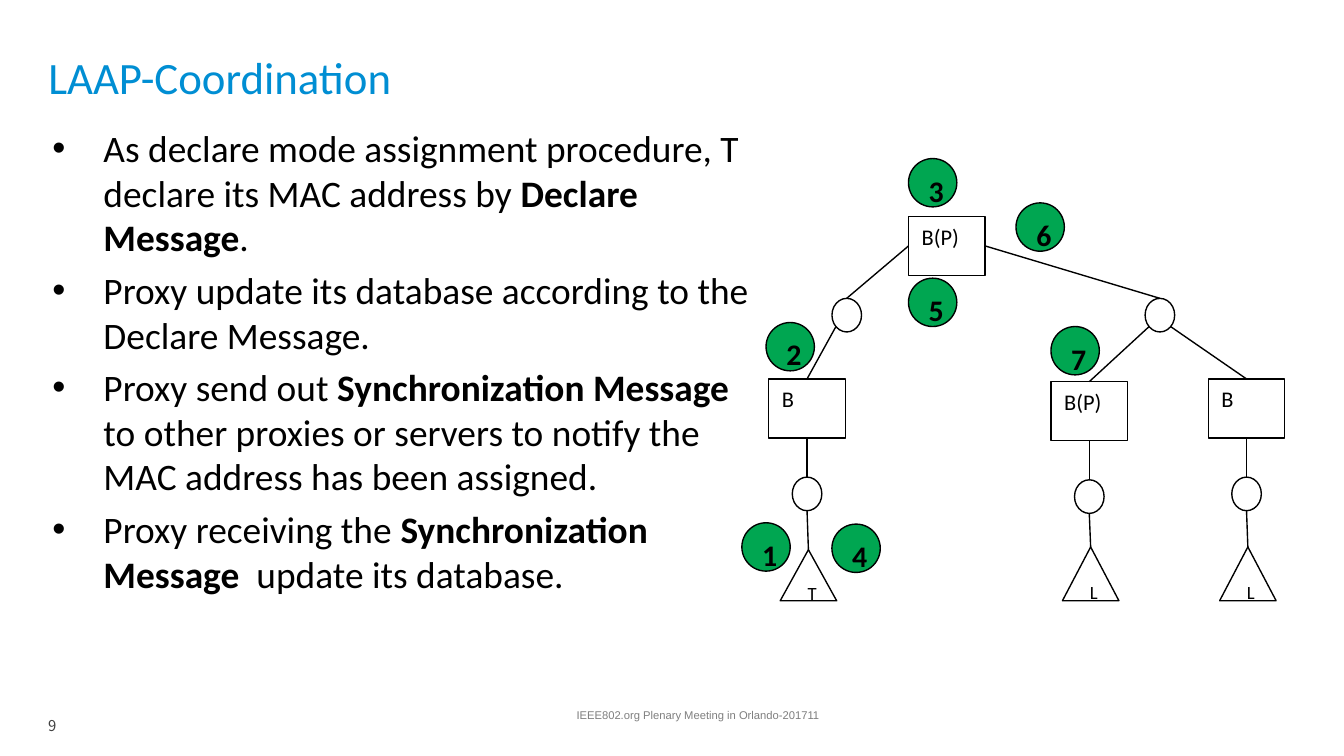
from lxml import etree
from pptx import Presentation
from pptx.dml.color import RGBColor
from pptx.enum.shapes import MSO_CONNECTOR, MSO_SHAPE as SHAPE
from pptx.enum.text import MSO_ANCHOR as ANCHOR, PP_ALIGN as ALIGN
from pptx.oxml.ns import qn
from pptx.util import Inches, Pt

COLORS = {
    "title": "008ED3", "text": "000000", "line": "000000", "step": "00A651",
    "number": "404040", "footer": "7F7F7F",
}
BOX_W, BOX_H = 0.57, 0.44
NODE_W, NODE_H = 0.22, 0.25
LEAF_W, LEAF_BOTTOM = 0.42, 4.47
STEP_D = 0.36
TOP, LEFT, BOTTOM, RIGHT = range(4)

# Each paragraph is a list of (text, bold) runs
BULLETS = [
    [("As declare mode assignment procedure, T declare its MAC address by ", False),
     ("Declare Message", True), (".", False)],
    [("Proxy update its database according to the Declare Message.", False)],
    [("Proxy send out ", False), ("Synchronization Message ", True),
     ("to other proxies or servers to notify the MAC address has been assigned.", False)],
    [("Proxy receiving the ", False), ("Synchronization Message  ", True),
     ("update its database.", False)],
]

# Left, top, box label, leaf label, leaf top
BRANCHES = [
    (5.72, 2.82, "B", "T", 4.09),
    (7.82, 2.84, "B(P)", "L", 4.07),
    (8.99, 2.82, "B", "L", 4.07),
]

# Left and top of the steps, numbered from 1
STEPS = [(5.52, 3.89), (5.7, 2.4), (6.76, 1.18), (6.19, 3.9),
         (6.76, 2.07), (7.56, 1.51), (7.82, 2.43)]


def rgb(name):
    return RGBColor.from_string(COLORS[name])


def add_run(p, text, size, color="text", font="Calibri", bold=False):
    r = p.add_run()
    r.text = text
    for name, value in {"size": Pt(size), "name": font, "bold": bold}.items():
        setattr(r.font, name, value)
    r.font.color.rgb = rgb(color)


def add_text_frame(s, left, top, width, height, inset=0):
    box = s.shapes.add_textbox(*map(Inches, (left, top, width, height)))
    tf = box.text_frame
    tf.word_wrap = True
    if inset is not None:
        for side in ("left", "top", "right", "bottom"):
            setattr(tf, f"margin_{side}", Inches(inset))
    return tf


def add_bullet(p):
    pPr = p._p.get_or_add_pPr()
    pPr.set("marL", str(Inches(0.38)))
    pPr.set("indent", str(-Inches(0.38)))
    etree.SubElement(pPr, qn("a:buFont")).set("typeface", "Arial")
    etree.SubElement(pPr, qn("a:buChar")).set("char", "•")


def add_node(s, kind, left, top, width, height, text="", size=12,
             fill=None, bold=False, align=ALIGN.LEFT):
    sp = s.shapes.add_shape(kind, *map(Inches, (left, top, width, height)))
    sp.shadow.inherit = False
    if fill:
        sp.fill.solid()
        sp.fill.fore_color.rgb = rgb(fill)
    else:
        sp.fill.background()
    sp.line.color.rgb = rgb("line")
    sp.line.width = Pt(0.75)
    if text:
        tf = sp.text_frame
        tf.vertical_anchor = ANCHOR.TOP
        p = tf.paragraphs[0]
        p.alignment = align
        add_run(p, text, size, bold=bold)
    return sp


def add_box(s, left, top, label):
    return add_node(s, SHAPE.RECTANGLE, left, top, BOX_W, BOX_H, label)


def add_relay(s, left, top):
    add_node(s, SHAPE.OVAL, left, top, NODE_W, NODE_H)


def add_link(s, start, end, box=None, side=TOP):
    """Draw a line; when a box is given the line starts at its side."""
    line = s.shapes.add_connector(MSO_CONNECTOR.STRAIGHT, *map(Inches, start + end))
    line.line.color.rgb = rgb("line")
    line.line.width = Pt(0.75)
    etree.SubElement(line._element.spPr, qn("a:effectLst"))
    if box is not None:
        line.begin_connect(box, side)


def add_branch(s, left, top, label, leaf, leaf_top):
    """Box, relay and leaf in one column, joined from top to bottom."""
    center = left + BOX_W / 2
    leaf_center = center + 0.01
    relay_top = top + 0.73
    box = add_box(s, left, top, label)
    add_relay(s, center - NODE_W / 2, relay_top)
    add_node(s, SHAPE.ISOSCELES_TRIANGLE, leaf_center - LEAF_W / 2, leaf_top,
             LEAF_W, LEAF_BOTTOM - leaf_top, leaf, 10)
    add_link(s, (center, top + BOX_H), (center, relay_top), box, BOTTOM)
    add_link(s, (center, relay_top + NODE_H), (leaf_center, leaf_top))
    return box


def add_tree(s):
    branches = [add_branch(s, *branch) for branch in BRANCHES]
    root = add_box(s, 6.76, 1.61, "B(P)")
    for left in (6.19, 8.52):
        add_relay(s, left, 2.22)

    # Root to relays
    for side, x, end_x in ((LEFT, 6.76, 6.3), (RIGHT, 7.33, 8.63)):
        add_link(s, (x, 1.83), (end_x, 2.22), root, side)

    # Branches to relays
    for box, (left, top, *_), end_x in zip(branches, BRANCHES, (6.22, 8.55, 8.71)):
        add_link(s, (left + BOX_W / 2, top), (end_x, 2.43), box, TOP)


def main():
    prs = Presentation()
    prs.slide_width = Inches(10)
    prs.slide_height = prs.slide_width * 9 // 16
    s = prs.slides.add_slide(prs.slide_layouts[6])

    # Slide number and footer
    tf = add_text_frame(s, 0.26, 5.25, 0.46, 0.3, inset=None)
    tf.vertical_anchor = ANCHOR.MIDDLE
    add_run(tf.paragraphs[0], "9", 8, "number", "Noto Sans CJK SC")
    tf = add_text_frame(s, 4.29, 5.27, 2.4, 0.14)
    add_run(tf.paragraphs[0], "IEEE802.org Plenary Meeting in Orlando-201711",
            6, "footer", "Arial")

    # Title
    tf = add_text_frame(s, 0.36, 0.37, 9.31, 0.79)
    add_run(tf.paragraphs[0], "LAAP-Coordination", 24, "title")

    # Bullet list
    tf = add_text_frame(s, 0.39, 0.93, 5.31, 3.87)
    for i, runs in enumerate(BULLETS):
        p = tf.add_paragraph() if i else tf.paragraphs[0]
        p.space_before = Pt(4 if i else 0)
        add_bullet(p)
        for text, bold in runs:
            add_run(p, text, 20, bold=bold)

    # Network tree and numbered steps
    add_tree(s)
    for number, (left, top) in enumerate(STEPS, 1):
        add_node(s, SHAPE.OVAL, left, top, STEP_D, STEP_D, str(number), 16,
                 "step", True, ALIGN.CENTER)

    prs.save("out.pptx")


if __name__ == "__main__":
    main()
